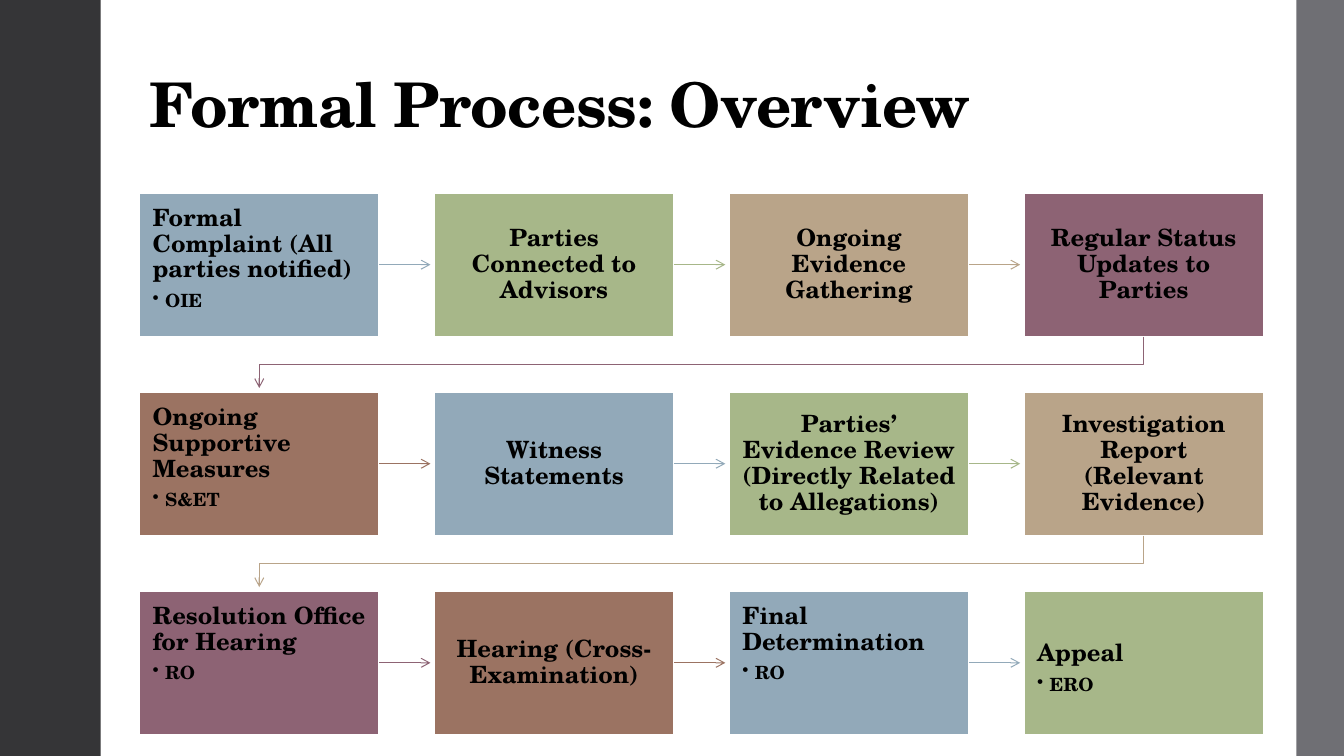
from lxml import etree
from pptx import Presentation
from pptx.dml.color import RGBColor
from pptx.enum import shapes, text
from pptx.oxml import ns
from pptx.util import Pt

FONT = "TeX Gyre Schola"
BLACK = RGBColor(0x00, 0x00, 0x00)
WHITE = RGBColor(0xFF, 0xFF, 0xFF)
CHARCOAL = RGBColor(0x35, 0x35, 0x37)
GRAY = RGBColor(0x6F, 0x6F, 0x74)
BLUE = RGBColor(0x92, 0xA9, 0xB9)
GREEN = RGBColor(0xA7, 0xB7, 0x89)
TAN = RGBColor(0xB9, 0xA4, 0x89)
PLUM = RGBColor(0x8D, 0x63, 0x74)
BROWN = RGBColor(0x9B, 0x73, 0x62)
STEP_COLORS = [BLUE, GREEN, TAN, PLUM, BROWN]

# Heading and responsible office of each step
STEPS = [
    ("Formal Complaint (All parties notified)", "OIE"),
    ("Parties Connected to Advisors", None),
    ("Ongoing Evidence Gathering", None),
    ("Regular Status Updates to Parties", None),
    ("Ongoing Supportive Measures", "S&ET"),
    ("Witness Statements", None),
    ("Parties’ Evidence Review (Directly Related to Allegations)", None),
    ("Investigation Report (Relevant Evidence)", None),
    ("Resolution Office for Hearing", "RO"),
    ("Hearing (Cross-Examination)", None),
    ("Final Determination", "RO"),
    ("Appeal", "ERO"),
]

# Grid of steps, in points
COLUMNS = 4
LEFT, TOP = 99.6, 137.7
WIDTH, HEIGHT = 171.2, 102.7
COLUMN_STEP, ROW_STEP = 210.6, 142.2
ARROW = 36.7
INSET = 9.4


def format_paragraph(paragraph, size, space_after=0):
    paragraph.line_spacing = 0.9
    paragraph.space_after = Pt(space_after)
    paragraph.font.name = FONT
    paragraph.font.size = Pt(size)
    paragraph.font.bold = True
    paragraph.font.color.rgb = BLACK


def style_arrow(arrow, color):
    arrow.line.color.rgb = color
    arrow.line.width = Pt(0.75)
    etree.SubElement(arrow.line._get_or_add_ln(), ns.qn("a:tailEnd"), type="arrow")
    etree.SubElement(arrow._element.spPr, ns.qn("a:effectLst"))


presentation = Presentation()
presentation.slide_width = Pt(960)
presentation.slide_height = Pt(540)
slide = presentation.slides.add_slide(presentation.slide_layouts[5])

# Side bars
for left, width, color in [(0, 72, CHARCOAL), (926, 34, GRAY)]:
    bar = slide.shapes.add_shape(
        shapes.MSO_SHAPE.RECTANGLE, Pt(left), Pt(0), Pt(width), Pt(540))
    bar.shadow.inherit = False
    bar.fill.solid()
    bar.fill.fore_color.rgb = color
    bar.line.fill.background()

# Title
title = slide.shapes.title
title.left, title.top, title.width, title.height = Pt(99.6), Pt(28.8), Pt(776), Pt(75.6)
title.text_frame.text = "Formal Process: Overview"
title.text_frame.vertical_anchor = text.MSO_ANCHOR.BOTTOM
title.text_frame.auto_size = text.MSO_AUTO_SIZE.NONE
heading = title.text_frame.paragraphs[0]
heading.alignment = text.PP_ALIGN.LEFT
format_paragraph(heading, 44)
heading.runs[0]._r.get_or_add_rPr().set("spc", "-50")

for index, (label, office) in enumerate(STEPS):
    row, column = divmod(index, COLUMNS)
    left = LEFT + column * COLUMN_STEP
    top = TOP + row * ROW_STEP
    color = STEP_COLORS[index % len(STEP_COLORS)]

    # Step box
    box = slide.shapes.add_shape(
        shapes.MSO_SHAPE.RECTANGLE, Pt(left), Pt(top), Pt(WIDTH), Pt(HEIGHT))
    box.shadow.inherit = False
    box.fill.solid()
    box.fill.fore_color.rgb = color
    box.line.color.rgb = WHITE
    box.line.width = Pt(1.35)

    # Step text
    frame = box.text_frame
    frame.word_wrap = True
    frame.margin_left = frame.margin_right = frame.margin_bottom = Pt(INSET)
    frame.margin_top = Pt(36 if label == "Appeal" else INSET)
    frame.vertical_anchor = text.MSO_ANCHOR.TOP if office else text.MSO_ANCHOR.MIDDLE
    paragraph = frame.paragraphs[0]
    paragraph.text = label
    paragraph.alignment = text.PP_ALIGN.LEFT if office else text.PP_ALIGN.CENTER
    format_paragraph(paragraph, 17, 6)
    if office:
        paragraph = frame.add_paragraph()
        paragraph.text = office
        paragraph.level = 1
        paragraph.alignment = text.PP_ALIGN.LEFT
        properties = paragraph._p.get_or_add_pPr()
        properties.set("marL", str(Pt(9)))
        properties.set("indent", str(-Pt(9)))
        etree.SubElement(properties, ns.qn("a:buChar"), char="•")
        format_paragraph(paragraph, 13, 2)

    # Arrow to the next step, bent at the end of a row
    if column < COLUMNS - 1:
        right, middle = left + WIDTH, top + HEIGHT / 2
        arrow = slide.shapes.add_connector(
            shapes.MSO_CONNECTOR.STRAIGHT,
            Pt(right), Pt(middle), Pt(right + ARROW), Pt(middle))
        arrow.begin_connect(box, 3)
        style_arrow(arrow, color)
    elif index < len(STEPS) - 1:
        start, end = left + WIDTH / 2, LEFT + WIDTH / 2
        bottom = top + HEIGHT
        bend = bottom + 19.7
        builder = slide.shapes.build_freeform(Pt(start), Pt(bottom))
        builder.add_line_segments(
            [(Pt(start), Pt(bend)), (Pt(end), Pt(bend)), (Pt(end), Pt(bottom + ARROW))],
            close=False)
        arrow = builder.convert_to_shape()
        arrow.fill.background()
        style_arrow(arrow, color)

presentation.save("out.pptx")
